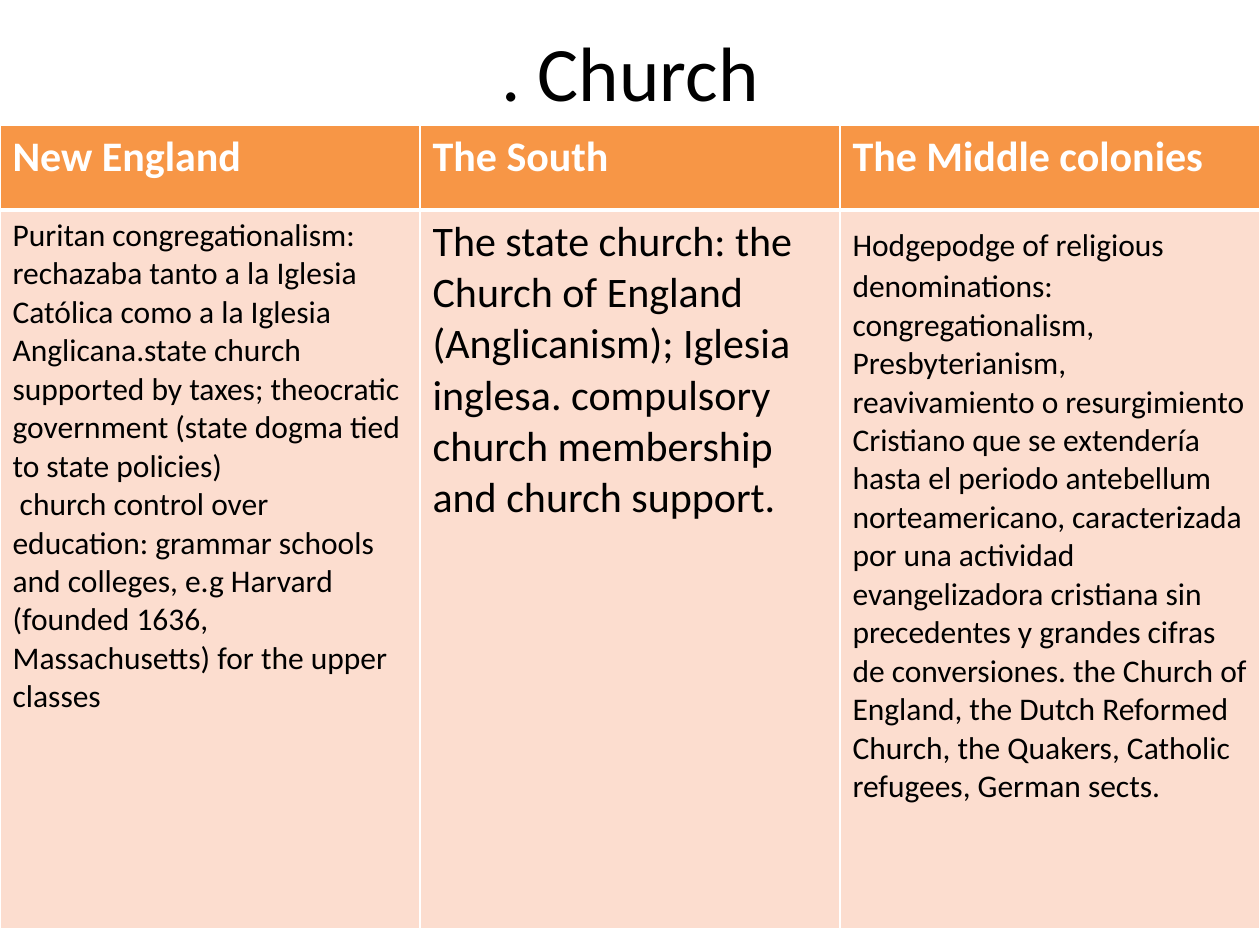
"""Build a slide comparing the church in three colonial regions."""
from dataclasses import dataclass

from lxml.etree import SubElement
from pptx import Presentation
from pptx.dml.color import RGBColor
from pptx.enum.text import MSO_ANCHOR, PP_ALIGN
from pptx.oxml.ns import qn
from pptx.util import Pt

COLORS = {"head": "F79646", "body": "FCDDCF", "white": "FFFFFF", "black": "000000"}
FONT = "Calibri"


@dataclass
class Run:
    text: str
    size: int = 18


@dataclass
class Region:
    name: str
    paragraphs: list[list[Run]]


REGIONS = [
    Region("New England", [
        [Run("Puritan congregationalism: rechazaba tanto a la Iglesia Católica como a la "
             "Iglesia Anglicana.state church supported by taxes; theocratic government "
             "(state dogma tied to state policies)")],
        [Run(" church control over education: grammar schools and colleges, e.g Harvard "
             "(founded 1636, Massachusetts) for the upper classes")],
    ]),
    Region("The South", [
        [Run("The state church: the Church of England (Anglicanism); Iglesia inglesa. "
             "compulsory church membership and church support.", 24)],
    ]),
    Region("The Middle colonies", [
        [Run("Hodgepodge of religious"),
         Run(" ", 24),
         Run("denominations: congregationalism, Presbyterianism, reavivamiento o "
             "resurgimiento Cristiano que se extendería hasta el periodo antebellum "
             "norteamericano, caracterizada por una actividad evangelizadora cristiana sin "
             "precedentes y grandes cifras de conversiones. the Church of England, the "
             "Dutch Reformed Church, the Quakers, Catholic refugees, German sects.")],
    ]),
]


def add_run(p, text: str, *, size: int, color: str = "black", bold: bool = False) -> None:
    r = p.add_run()
    r.text = text
    r.font.name = FONT
    r.font.size = Pt(size)
    r.font.bold = bold
    r.font.color.rgb = RGBColor.from_string(COLORS[color])


def set_borders(cell, **widths: float) -> None:
    tc_pr = cell._tc.get_or_add_tcPr()
    for i, side in enumerate("LRTB"):
        ln = SubElement(tc_pr, qn(f"a:ln{side}"), w=str(Pt(widths.get(side, 1))))
        fill = SubElement(ln, qn("a:solidFill"))
        SubElement(fill, qn("a:srgbClr"), val=COLORS["white"])
        tc_pr.insert(i, ln)


def fill_cell(cell, color: str, **widths: float) -> None:
    cell.fill.solid()
    cell.fill.fore_color.rgb = RGBColor.from_string(COLORS[color])
    set_borders(cell, **widths)


def add_title(slide, text: str) -> None:
    sp = slide.shapes.title
    sp.left, sp.top, sp.width, sp.height = Pt(36), Pt(21.6), Pt(648), Pt(90)
    tf = sp.text_frame
    tf.vertical_anchor = MSO_ANCHOR.MIDDLE
    tf.margin_top, tf.margin_bottom = 0, Pt(52)
    p = tf.paragraphs[0]
    p.alignment = PP_ALIGN.CENTER
    add_run(p, text, size=44)


def add_regions(slide, regions: list[Region]) -> None:
    frame = slide.shapes.add_table(2, len(regions), 0, Pt(71.5), Pt(720), Pt(459))
    table = frame.table
    table.horz_banding = False
    table.rows[0].height, table.rows[1].height = Pt(48.6), Pt(410.4)
    for col, region in enumerate(regions):
        table.columns[col].width = Pt(720 / len(regions))
        head, body = table.cell(0, col), table.cell(1, col)
        fill_cell(head, "head", B=3)
        fill_cell(body, "body", T=3)
        add_run(head.text_frame.paragraphs[0], region.name, size=24, color="white", bold=True)
        tf = body.text_frame
        for i, runs in enumerate(region.paragraphs):
            p = tf.add_paragraph() if i else tf.paragraphs[0]
            for run in runs:
                add_run(p, run.text, size=run.size)


def main() -> None:
    prs = Presentation()
    prs.slide_width, prs.slide_height = Pt(720), Pt(540)
    slide = prs.slides.add_slide(prs.slide_layouts[5])
    add_title(slide, ". Church")
    add_regions(slide, REGIONS)
    prs.save("out.pptx")


if __name__ == "__main__":
    main()
